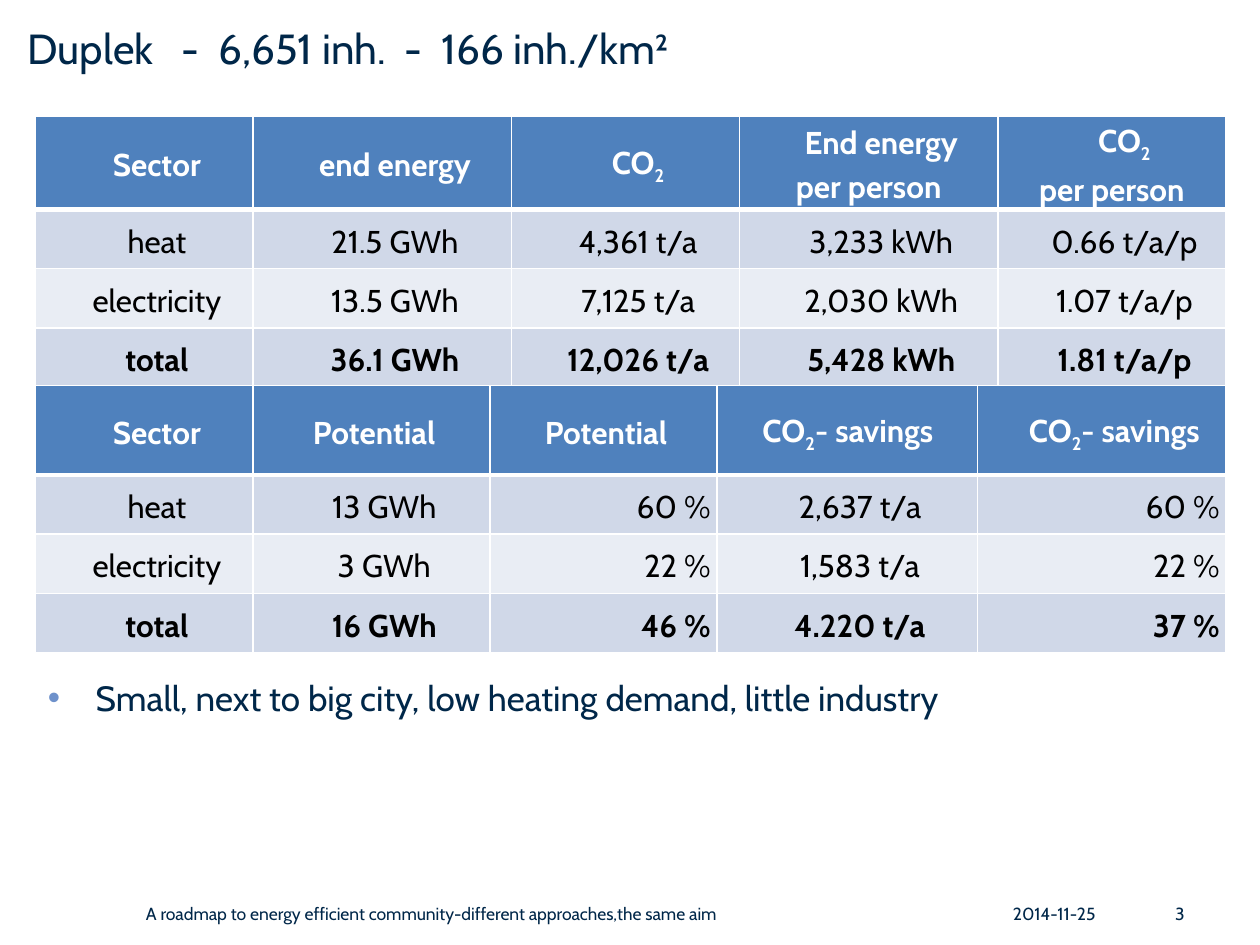
from lxml import etree
from pptx import Presentation
from pptx.dml.color import RGBColor
from pptx.enum.text import MSO_ANCHOR, MSO_AUTO_SIZE, PP_ALIGN
from pptx.oxml.ns import qn
from pptx.util import Inches, Pt

LEFT, CENTER, RIGHT = PP_ALIGN.LEFT, PP_ALIGN.CENTER, PP_ALIGN.RIGHT
TOP, MIDDLE = MSO_ANCHOR.TOP, MSO_ANCHOR.MIDDLE
NO_FIT = MSO_AUTO_SIZE.NONE

FONT = "Cabin"
NAVY, BULLET, HEADER, WHITE, BLACK = "002749", "6E91CB", "4F81BD", "FFFFFF", "000000"
BANDS = ["D0D8E8", "E9EDF4"]
ROW_HEIGHT = 0.47

TITLE = "Duplek   -  6,651 inh.  -  166 inh./km²"
REMARK = "Small, next to big city, low heating demand, little industry"
FOOTERS = [
    ("A roadmap to energy efficient community-different approaches,the same aim", 1.06, 6.46, LEFT),
    ("2014-11-25", 7.94, 0.92, LEFT),
    ("3", 8.86, 0.64, RIGHT),
]
SUBSCRIPT_MARK = "_"
TABLES = [
    {
        "top": 0.92,
        "header_height": 0.56,
        "widths": [1.73, 2.05, 1.81, 2.05, 1.81],
        "header_indents": [0.2] * 5,
        "aligns": [CENTER] * 5,
        "rows": [
            ["Sector", "end energy", "CO_2", "End energy\nper person", "CO_2\nper person"],
            ["heat", "21.5 GWh", "4,361 t/a", "3,233 kWh", "0.66 t/a/p"],
            ["electricity", "13.5 GWh", "7,125 t/a", "2,030 kWh", "1.07 t/a/p"],
            ["total", "36.1 GWh", "12,026 t/a", "5,428 kWh", "1.81 t/a/p"],
        ],
    },
    {
        "top": 3.06,
        "header_height": 0.71,
        "widths": [1.73, 1.88, 1.8, 2.07, 1.97],
        "header_indents": [0.2, 0.04, 0.04, 0.01, 0.2],
        "aligns": [CENTER, CENTER, RIGHT, CENTER, RIGHT],
        "rows": [
            ["Sector", "Potential", "Potential", "CO_2- savings", "CO_2- savings"],
            ["heat", "13 GWh", "60 %", "2,637 t/a", "60 %"],
            ["electricity", "3 GWh", "22 %", "1,583 t/a", "22 %"],
            ["total", "16 GWh", "46 %", "4.220 t/a", "37 %"],
        ],
    },
]


def color(value):
    """Turn a hex string into a colour."""
    return RGBColor.from_string(value)


def style(para, size, ink, align=LEFT, bold=False):
    """Format a whole paragraph."""
    para.alignment = align
    para.space_before = Pt(0)
    para.font.name = FONT
    para.font.size = Pt(size)
    para.font.bold = bold
    para.font.color.rgb = color(ink)


def place(shape, left, top, width, height):
    """Set the position and size of a shape."""
    shape.left, shape.top = Inches(left), Inches(top)
    shape.width, shape.height = Inches(width), Inches(height)


def fill_frame(shape, text, anchor):
    """Put text in a shape and return its paragraph."""
    frame = shape.text_frame
    frame.text = text
    frame.word_wrap = True
    frame.auto_size = NO_FIT
    frame.vertical_anchor = anchor
    return frame.paragraphs[0]


def indent(para, margin, first):
    """Set the left margin and first-line indent of a paragraph."""
    properties = para._p.get_or_add_pPr()
    properties.set("marL", str(Inches(margin)))
    properties.set("indent", str(Inches(first)))
    return properties


def add_bullet(para):
    """Give a paragraph a coloured hanging bullet."""
    properties = indent(para, 0.38, -0.38)
    tint = etree.SubElement(properties, qn("a:buClr"))
    etree.SubElement(tint, qn("a:srgbClr"), val=BULLET)
    etree.SubElement(properties, qn("a:buChar"), char="•")


def add_borders(cell, top, bottom):
    """Draw white borders around a cell."""
    properties = cell._tc.get_or_add_tcPr()
    for side, points in (("L", 1), ("R", 1), ("T", top), ("B", bottom)):
        line = etree.SubElement(properties, qn("a:ln" + side), w=str(Pt(points)))
        solid = etree.SubElement(line, qn("a:solidFill"))
        etree.SubElement(solid, qn("a:srgbClr"), val=WHITE)


def write_cell_text(para, text):
    """Write text with line breaks and marked subscripts."""
    for number, line in enumerate(text.split("\n")):
        if number:
            para.add_line_break()
        start, mark, rest = line.partition(SUBSCRIPT_MARK)
        para.add_run().text = start
        if mark:
            span = para.add_run()
            span.text = rest[0]
            span.font._element.set("baseline", "-25000")
            if rest[1:]:
                para.add_run().text = rest[1:]


def add_energy_table(page, data):
    """Add one sector table."""
    rows, widths = data["rows"], data["widths"]
    heights = [data["header_height"]] + [ROW_HEIGHT] * (len(rows) - 1)
    frame = page.shapes.add_table(
        len(rows), len(widths), Inches(0.28), Inches(data["top"]),
        Inches(sum(widths)), Inches(sum(heights)))
    table = frame.table
    for column, width in zip(table.columns, widths):
        column.width = Inches(width)
    for r, (row, height) in enumerate(zip(rows, heights)):
        table.rows[r].height = Inches(height)
        header = r == 0
        for c, text in enumerate(row):
            cell = table.cell(r, c)
            add_borders(cell, 3 if r == 1 else 1, 3 if header else 1)
            cell.fill.solid()
            cell.fill.fore_color.rgb = color(HEADER if header else BANDS[(r - 1) % 2])
            cell.vertical_anchor = MIDDLE
            cell.margin_left = cell.margin_right = Inches(0.05)
            cell.margin_top = cell.margin_bottom = 0
            para = cell.text_frame.paragraphs[0]
            write_cell_text(para, text)
            indent(para, 0, data["header_indents"][c] if header else 0.2)
            para.line_spacing = 1.15
            style(para, 18, WHITE if header else BLACK,
                  CENTER if header else data["aligns"][c],
                  header or row[0] == "total")


def main():
    """Build the slide and save it."""
    deck = Presentation()
    deck.slide_width, deck.slide_height = Inches(10), Inches(7.5)
    page = deck.slides.add_slide(deck.slide_layouts[1])
    title, body = page.placeholders
    place(title, 0.12, 0.13, 9.53, 0.63)
    style(fill_frame(title, TITLE, TOP), 24, NAVY)
    place(body, 0.28, 5.32, 9.45, 1.1)
    remark = fill_frame(body, REMARK, TOP)
    add_bullet(remark)
    style(remark, 20, NAVY)
    for text, left, width, align in FOOTERS:
        box = page.shapes.add_textbox(Inches(left), Inches(7.05), Inches(width), Inches(0.4))
        style(fill_frame(box, text, MIDDLE), 10, NAVY, align)
    for data in TABLES:
        add_energy_table(page, data)
    deck.save("out.pptx")


if __name__ == "__main__":
    main()
